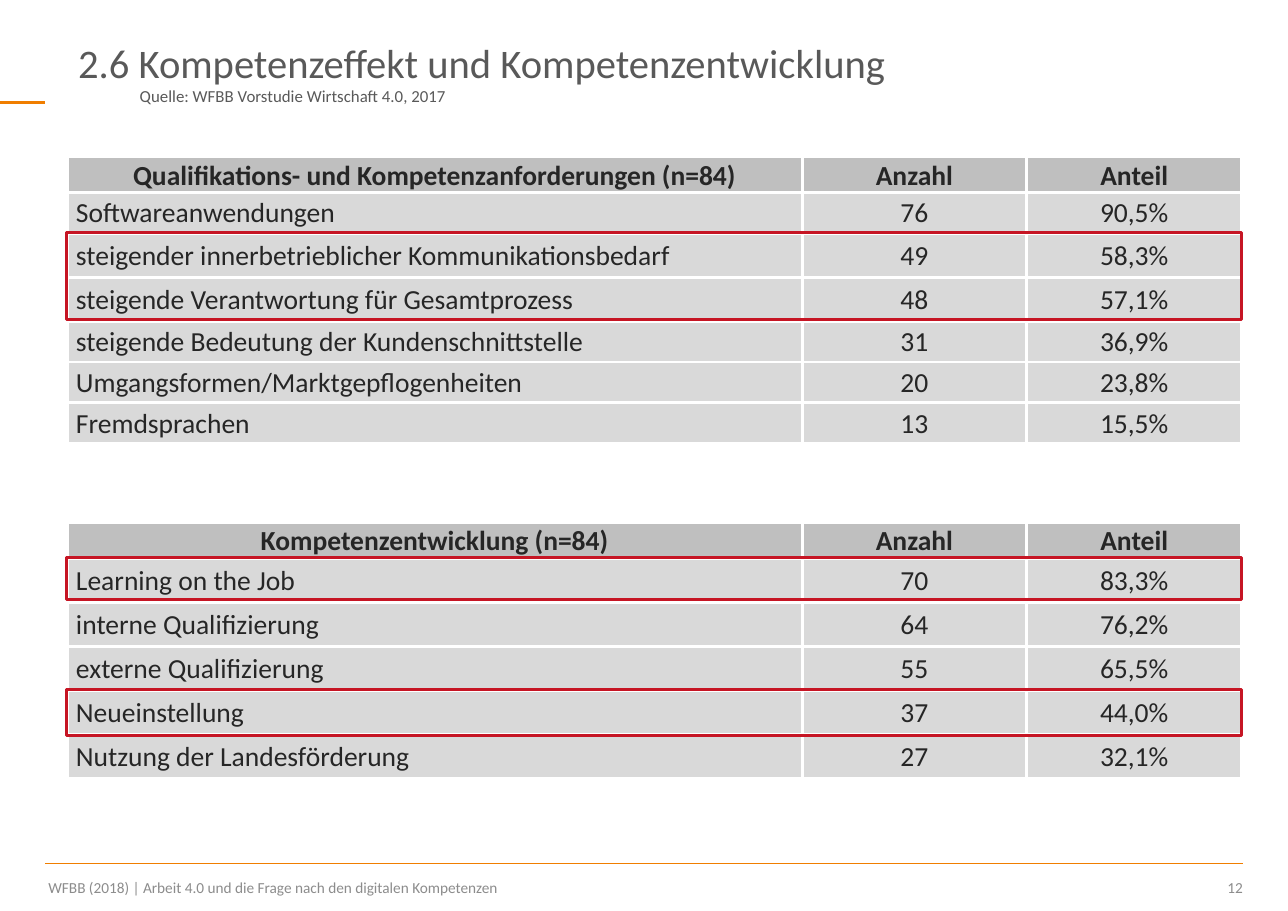
from lxml import etree
from pptx import Presentation
from pptx import util as u
from pptx.dml.color import RGBColor
from pptx.enum import shapes, text
from pptx.oxml import ns

PX = 9144
FONT = "Calibri"
COLORS = {
    "orange": "F07E00",
    "red": "C61524",
    "white": "FFFFFF",
    "heading": "595959",
    "footer": "8C8C8C",
    "ink": "262626",
    "header": "BFBFBF",
    "body": "D9D9D9",
}
TABLE_LEFT, TABLE_WIDTH = 61, 1067
COLUMN_WIDTHS = [667, 204, 195]
REQUIREMENTS = [
    ("Qualifikations- und Kompetenzanforderungen (n=84)", "Anzahl", "Anteil"),
    ("Softwareanwendungen", "76", "90,5%"),
    ("steigender innerbetrieblicher Kommunikationsbedarf", "49", "58,3%"),
    ("steigende Verantwortung für Gesamtprozess", "48", "57,1%"),
    ("steigende Bedeutung der Kundenschnittstelle", "31", "36,9%"),
    ("Umgangsformen/Marktgepflogenheiten", "20", "23,8%"),
    ("Fremdsprachen", "13", "15,5%"),
]
DEVELOPMENT = [
    ("Kompetenzentwicklung (n=84)", "Anzahl", "Anteil"),
    ("Learning on the Job", "70", "83,3%"),
    ("interne Qualifizierung", "64", "76,2%"),
    ("externe Qualifizierung", "55", "65,5%"),
    ("Neueinstellung", "37", "44,0%"),
    ("Nutzung der Landesförderung", "27", "32,1%"),
]


def px(*lengths):
    return [u.Emu(length * PX) for length in lengths]


def rgb(name):
    return RGBColor.from_string(COLORS[name])


def write(frame, content, size, color, bold=False, align="LEFT", spacing=None):
    paragraph = frame.paragraphs[0]
    paragraph.alignment = getattr(text.PP_ALIGN, align)
    paragraph.line_spacing = spacing
    run = paragraph.add_run()
    run.text = content
    run.font.name = FONT
    run.font.size = u.Pt(size)
    run.font.bold = bold
    run.font.color.rgb = rgb(color)


def set_insets(target, insets):
    (target.margin_left, target.margin_top,
     target.margin_right, target.margin_bottom) = px(*insets)


def prepare_frame(shape, insets):
    frame = shape.text_frame
    frame.word_wrap = True
    frame.auto_size = text.MSO_AUTO_SIZE.NONE
    frame.vertical_anchor = text.MSO_ANCHOR.TOP
    set_insets(frame, insets)
    return frame


def add_title(slide, content, box):
    title = slide.shapes.title
    title.left, title.top, title.width, title.height = px(*box)
    write(prepare_frame(title, (10, 5, 10, 5)), content, 26.5, "heading")


def add_text(slide, content, box, insets=(10, 5, 10, 5), **style):
    shape = slide.shapes.add_textbox(*px(*box))
    write(prepare_frame(shape, insets), content, **style)


def add_rule(slide, left, right, top, weight):
    rule = slide.shapes.add_connector(
        shapes.MSO_CONNECTOR.STRAIGHT, *px(left, top, right, top))
    rule.line.color.rgb = rgb("orange")
    rule.line.width = u.Pt(weight)
    etree.SubElement(rule._element.spPr, ns.qn("a:effectLst"))


def add_frame(slide, top, height):
    frame = slide.shapes.add_shape(
        shapes.MSO_SHAPE.RECTANGLE, *px(60, top, TABLE_WIDTH, height))
    frame.shadow.inherit = False
    frame.fill.background()
    frame.line.color.rgb = rgb("red")
    frame.line.width = u.Pt(2)


def set_borders(cell):
    properties = cell._tc.get_or_add_tcPr()
    for side in ("lnL", "lnR", "lnT", "lnB"):
        line = etree.SubElement(properties, ns.qn(f"a:{side}"), w=str(u.Pt(2.25)))
        fill = etree.SubElement(line, ns.qn("a:solidFill"))
        etree.SubElement(fill, ns.qn("a:srgbClr"), val=COLORS["white"])


def format_cell(cell, content, is_header, is_label):
    set_borders(cell)
    cell.fill.solid()
    cell.fill.fore_color.rgb = rgb("header" if is_header else "body")
    cell.vertical_anchor = text.MSO_ANCHOR.MIDDLE
    if is_header:
        set_insets(cell, (7, 0, 7, 0))
    else:
        set_insets(cell, (8 if is_label else 1, 1, 1, 0))
    write(cell.text_frame, content, 18, "ink", bold=is_header,
          align="LEFT" if is_label and not is_header else "CENTER",
          spacing=1.07 if is_header else None)


def add_table(slide, rows, top, heights):
    shape = slide.shapes.add_table(
        len(rows), len(COLUMN_WIDTHS),
        *px(TABLE_LEFT, top, TABLE_WIDTH, sum(heights)))
    table = shape.table
    table.horz_banding = False
    for column, width in zip(table.columns, px(*COLUMN_WIDTHS)):
        column.width = width
    for row, height in zip(table.rows, px(*heights)):
        row.height = height
    for i, row in enumerate(rows):
        for j, content in enumerate(row):
            format_cell(table.cell(i, j), content, i == 0, j == 0)


def main():
    presentation = Presentation()
    presentation.slide_width, presentation.slide_height = px(1169, 827)
    slide = presentation.slides.add_slide(presentation.slide_layouts[5])

    add_rule(slide, 0, 41, 93, 2)
    add_rule(slide, 41, 1128, 784, 1)
    add_text(slide, "WFBB (2018) | Arbeit 4.0 und die Frage nach den digitalen Kompetenzen",
             (41, 785, 1017, 41), insets=(3, 12, 0, 0), size=10, color="footer")
    add_text(slide, "12", (1058, 785, 70, 41), insets=(0, 12, 0, 0),
             size=10, color="footer", align="RIGHT")

    add_title(slide, "2.6 Kompetenzeffekt und Kompetenzentwicklung", (61, 29, 784, 55))
    add_text(slide, "Quelle: WFBB Vorstudie Wirtschaft 4.0, 2017",
             (117, 73, 580, 29), size=11, color="heading")

    add_table(slide, REQUIREMENTS, 142, [31, 37, 40, 40, 37, 37, 37])
    add_table(slide, DEVELOPMENT, 474, [31] + [40] * 5)
    for top, height in ((211, 79), (506, 38), (626, 42)):
        add_frame(slide, top, height)

    presentation.save("out.pptx")


if __name__ == "__main__":
    main()
